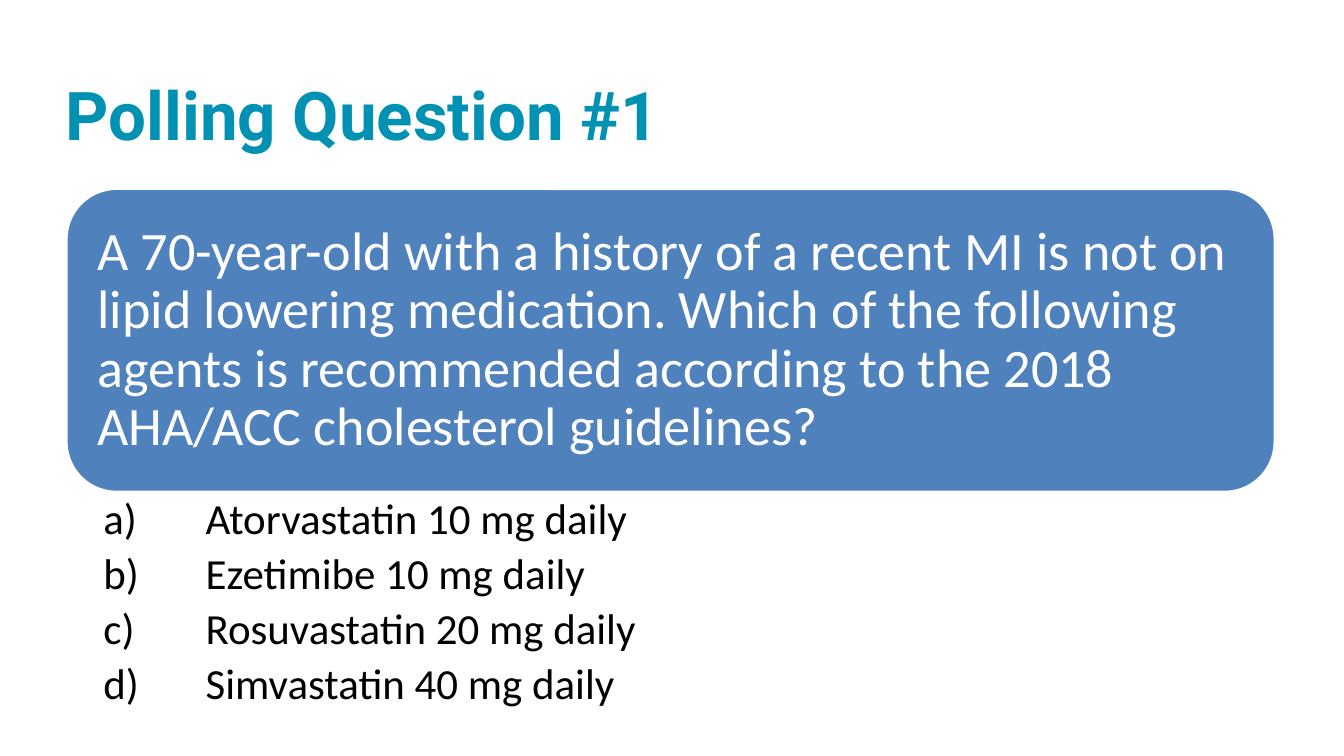
"""Build a polling question slide with a question panel and lettered answers."""
from dataclasses import dataclass

from lxml import etree
from pptx import Presentation, util as u
from pptx.dml.color import RGBColor
from pptx.enum import shapes, text
from pptx.oxml import ns

COLORS = {"title": "0091B3", "panel": "4F81BD", "light": "FFFFFF", "dark": "000000"}
WIDTH = u.Inches(10)
HEIGHT = WIDTH * 9 // 16
COLUMNS, ROWS = 100, 56.25
LEFT, SPAN = 4.9, 90
HANGING = u.Inches(0.76)
QUESTION = (
    "A 70-year-old with a history of a recent MI is not on lipid lowering medication. "
    "Which of the following agents is recommended according to the 2018 "
    "AHA/ACC cholesterol guidelines?"
)
ANSWERS = (
    "Atorvastatin 10 mg daily",
    "Ezetimibe 10 mg daily",
    "Rosuvastatin 20 mg daily",
    "Simvastatin 40 mg daily",
)


@dataclass(frozen=True)
class Area:
    column: float
    row: float
    columns: float
    rows: float

    def lengths(self) -> tuple[int, ...]:
        return (
            int(WIDTH * self.column / COLUMNS),
            int(HEIGHT * self.row / ROWS),
            int(WIDTH * self.columns / COLUMNS),
            int(HEIGHT * self.rows / ROWS),
        )


@dataclass(frozen=True)
class TextBlock:
    area: Area
    lines: tuple[str, ...]
    size: float
    color: str
    font: str = "Calibri"
    bold: bool = False
    insets: tuple[float, float, float, float] = (0, 0, 0, 0)
    anchor: text.MSO_ANCHOR = text.MSO_ANCHOR.TOP
    space_after: float = 0
    lettered: bool = False


BLOCKS = (
    TextBlock(Area(LEFT, 6.15, SPAN, 7.8), ("Polling Question #1",), 36, "title",
              font="Roboto", bold=True),
    TextBlock(Area(6.05, 15.1, 87.8, 20.45), (QUESTION,), 29, "light",
              insets=(0.12, 0.12, 0.12, 0.12), anchor=text.MSO_ANCHOR.MIDDLE),
    TextBlock(Area(LEFT, 36.6, SPAN, 17.4), ANSWERS, 23, "dark",
              insets=(0.28, 0.04, 0.23, 0.04), space_after=4.7, lettered=True),
)


def color_of(name: str) -> RGBColor:
    return RGBColor.from_string(COLORS[name])


def add_letter(para) -> None:
    para.level = 1
    properties = para._p.get_or_add_pPr()
    properties.set("marL", str(HANGING))
    properties.set("indent", str(-HANGING))
    etree.SubElement(properties, ns.qn("a:buAutoNum"), type="alphaLcParenR")


def draw_panel(page, area: Area) -> None:
    panel = page.shapes.add_shape(shapes.MSO_SHAPE.ROUNDED_RECTANGLE, *area.lengths())
    panel.shadow.inherit = False
    panel.fill.solid()
    panel.fill.fore_color.rgb = color_of("panel")
    panel.line.color.rgb = color_of("light")
    panel.line.width = u.Pt(2)


def draw_text(page, block: TextBlock) -> None:
    box = page.shapes.add_textbox(*block.area.lengths())
    frame = box.text_frame
    frame.word_wrap = True
    frame.vertical_anchor = block.anchor
    (frame.margin_left, frame.margin_top,
     frame.margin_right, frame.margin_bottom) = map(u.Inches, block.insets)
    for index, line in enumerate(block.lines):
        para = frame.add_paragraph() if index else frame.paragraphs[0]
        if block.lettered:
            add_letter(para)
        para.line_spacing = 0.9
        para.space_after = u.Pt(block.space_after)
        span = para.add_run()
        span.text = line
        span.font.name = block.font
        span.font.size = u.Pt(block.size)
        span.font.bold = block.bold
        span.font.color.rgb = color_of(block.color)


def main() -> None:
    deck = Presentation()
    deck.slide_width, deck.slide_height = WIDTH, HEIGHT
    page = deck.slides.add_slide(deck.slide_layouts[6])
    draw_panel(page, Area(LEFT, 14, SPAN, 22.65))
    for block in BLOCKS:
        draw_text(page, block)
    deck.save("out.pptx")


if __name__ == "__main__":
    main()
